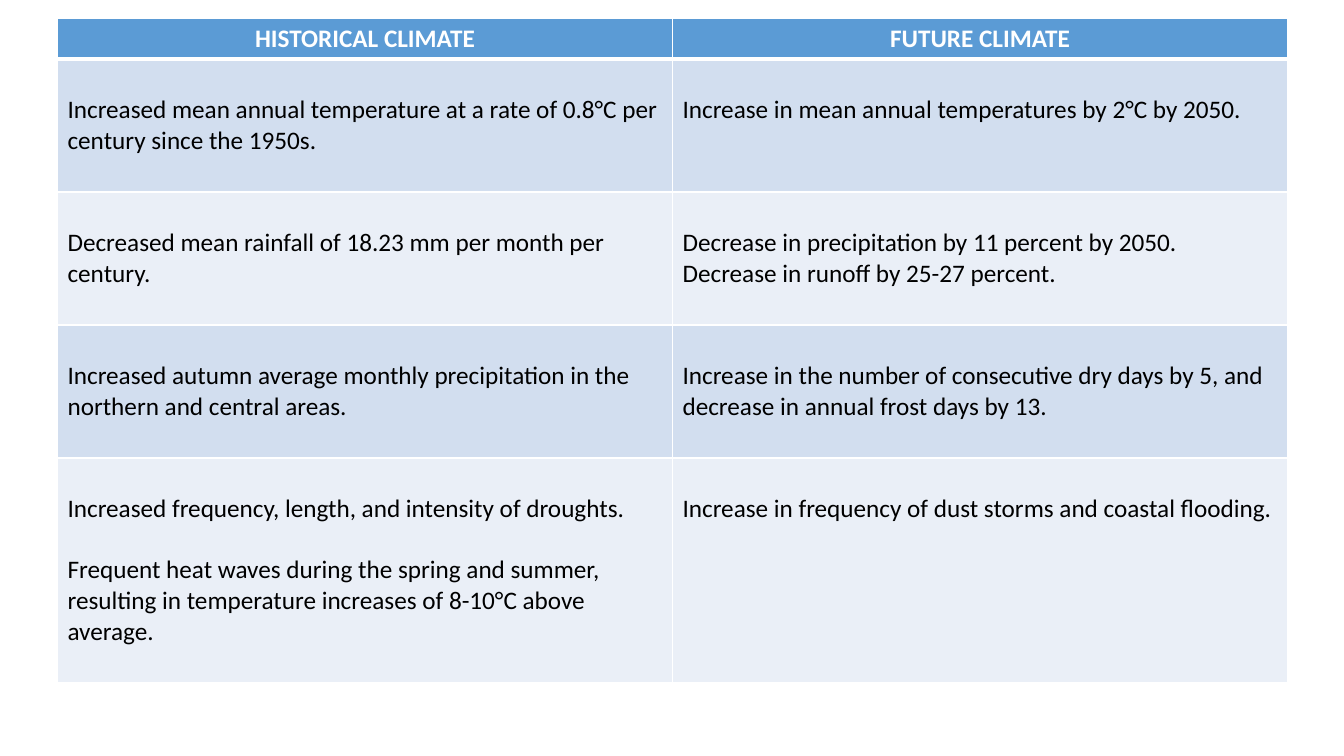
"""Build a slide with a table of historical and future climate trends."""
import lxml.etree
import pptx
import pptx.dml.color
import pptx.enum.text
import pptx.oxml.ns
import pptx.util

Inches, Pt = pptx.util.Inches, pptx.util.Pt
RGBColor = pptx.dml.color.RGBColor

HEADINGS = ("HISTORICAL CLIMATE", "FUTURE CLIMATE")
TRENDS = [
    ("Increased mean annual temperature at a rate of 0.8°C per century since the 1950s.",
     "Increase in mean annual temperatures by 2°C by 2050."),
    ("Decreased mean rainfall of 18.23 mm per month per century.",
     "Decrease in precipitation by 11 percent by 2050.\vDecrease in runoff by 25-27 percent."),
    ("Increased autumn average monthly precipitation in the northern and central areas.",
     "Increase in the number of consecutive dry days by 5, and decrease in annual frost days by 13."),
    ("Increased frequency, length, and intensity of droughts.\n"
     "Frequent heat waves during the spring and summer, resulting in temperature "
     "increases of 8-10°C above average.",
     "Increase in frequency of dust storms and coastal flooding."),
]
ROW_HEIGHTS = (0.4, 1.32, 1.32, 1.32, 2.23)
COLUMN_WIDTH = 6.1
LEFT, TOP = 0.57, 0.18

THEME = {
    "font": "Calibri",
    "size": 18,
    "heading_text": "FFFFFF",
    "body_text": "000000",
    "heading_fill": "5B9BD5",
    "bands": ("D2DEEF", "EAEFF7"),
    "border": "FFFFFF",
    "thin": 1,
    "thick": 3,
    "body_margin": 0.35,
    "paragraph_gap": 22,
}


def add_border(cell, side, width):
    """Draw one solid border on a cell."""
    qn = pptx.oxml.ns.qn
    properties = cell._tc.get_or_add_tcPr()
    line = lxml.etree.SubElement(properties, qn(f"a:ln{side}"), w=str(Pt(width)))
    fill = lxml.etree.SubElement(line, qn("a:solidFill"))
    lxml.etree.SubElement(fill, qn("a:srgbClr"), val=THEME["border"])


def format_cell(cell, text, row):
    """Fill a cell with its text, borders and colours."""
    heading = row == 0
    for side in "LRTB":
        thick = (row, side) in ((0, "B"), (1, "T"))
        add_border(cell, side, THEME["thick" if thick else "thin"])
    fill = THEME["heading_fill"] if heading else THEME["bands"][(row - 1) % 2]
    cell.fill.solid()
    cell.fill.fore_color.rgb = RGBColor.from_string(fill)
    if not heading:
        cell.margin_top = Inches(THEME["body_margin"])
    cell.text_frame.text = text
    for index, paragraph in enumerate(cell.text_frame.paragraphs):
        if heading:
            paragraph.alignment = pptx.enum.text.PP_ALIGN.CENTER
        if index:
            paragraph.space_before = Pt(THEME["paragraph_gap"])
        for run in paragraph.runs:
            run.font.name = THEME["font"]
            run.font.size = Pt(THEME["size"])
            run.font.bold = heading
            color = THEME["heading_text" if heading else "body_text"]
            run.font.color.rgb = RGBColor.from_string(color)


def main():
    """Create and save the presentation."""
    presentation = pptx.Presentation()
    presentation.slide_width, presentation.slide_height = Inches(13.33), Inches(7.5)
    slide = presentation.slides.add_slide(presentation.slide_layouts[6])
    rows = [HEADINGS, *TRENDS]
    table = slide.shapes.add_table(
        len(rows), len(HEADINGS), Inches(LEFT), Inches(TOP),
        Inches(COLUMN_WIDTH * len(HEADINGS)), Inches(sum(ROW_HEIGHTS))).table
    for column in table.columns:
        column.width = Inches(COLUMN_WIDTH)
    for row, (texts, height) in enumerate(zip(rows, ROW_HEIGHTS)):
        table.rows[row].height = Inches(height)
        for column, text in enumerate(texts):
            format_cell(table.cell(row, column), text, row)
    presentation.save("out.pptx")


if __name__ == "__main__":
    main()
